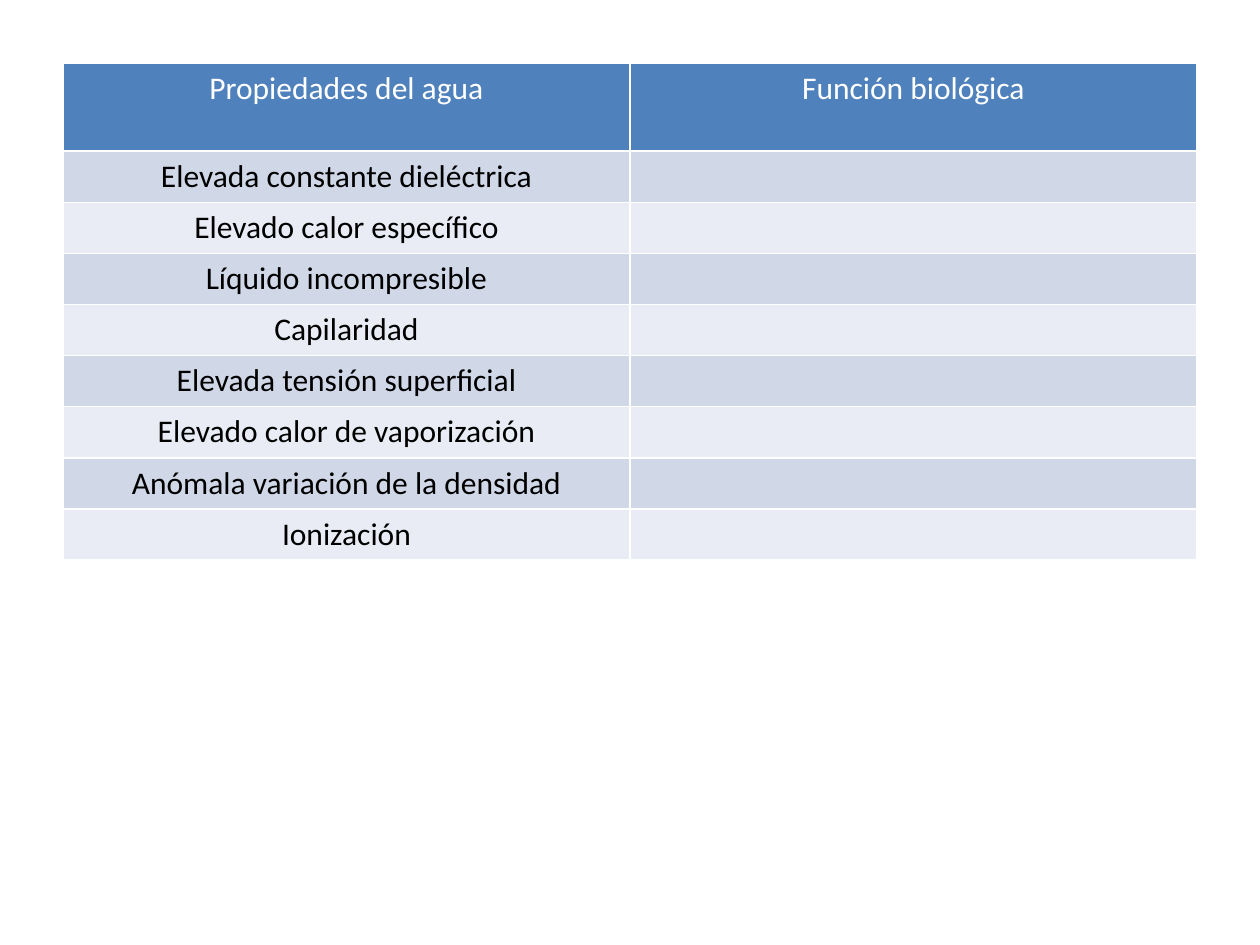
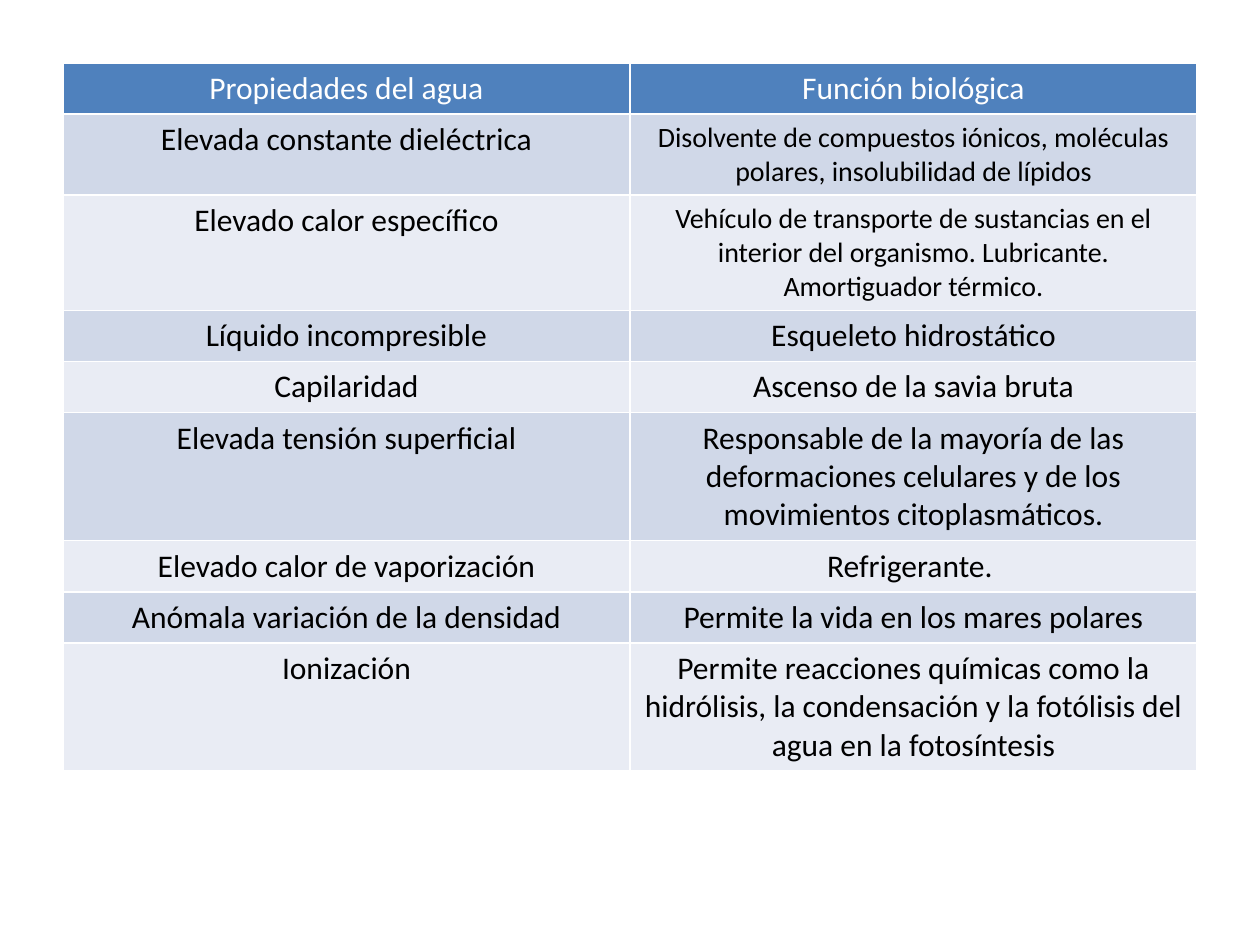
from lxml.etree import SubElement
from pptx import Presentation
from pptx.dml.color import RGBColor
from pptx.enum.text import PP_ALIGN
from pptx.oxml.ns import qn
from pptx.util import Inches, Pt

# Shared style
WIDTH, HEIGHT = 10, 7.5
MARGIN = WIDTH / 20
ROW_HEIGHT = 0.4
WHITE, BLACK, HEADER_BLUE = "FFFFFF", "000000", "4F81BD"
BANDS = ("D0D8E8", "E9ECF4")
BODY_SIZE, SMALL_SIZE = 18, 16

# Content: property, biological function, size of the function text
HEADINGS = ("Propiedades del agua", "Función biológica")
PROPERTIES = [
    ("Elevada constante dieléctrica",
     "Disolvente de compuestos iónicos, moléculas polares, insolubilidad de lípidos",
     SMALL_SIZE),
    ("Elevado calor específico",
     "Vehículo de transporte de sustancias en el interior del organismo. "
     "Lubricante. Amortiguador térmico.", SMALL_SIZE),
    ("Líquido incompresible", "Esqueleto hidrostático", BODY_SIZE),
    ("Capilaridad", "Ascenso de la savia bruta", BODY_SIZE),
    ("Elevada tensión superficial",
     "Responsable de la mayoría de las deformaciones celulares y de los "
     "movimientos citoplasmáticos.", BODY_SIZE),
    ("Elevado calor de vaporización", "Refrigerante. ", BODY_SIZE),
    ("Anómala variación de la densidad", "Permite la vida en los mares polares",
     BODY_SIZE),
    ("Ionización",
     "Permite reacciones químicas como la hidrólisis, la condensación y la "
     "fotólisis del agua en la fotosíntesis", BODY_SIZE),
]


def color(hex_value):
    return RGBColor.from_string(hex_value)


def set_borders(cell):
    """Draw thin white lines on the four sides of a cell."""
    properties = cell._tc.get_or_add_tcPr()
    for side in ("a:lnL", "a:lnR", "a:lnT", "a:lnB"):
        line = SubElement(properties, qn(side), w=str(Pt(1)))
        fill = SubElement(line, qn("a:solidFill"))
        SubElement(fill, qn("a:srgbClr"), val=WHITE)


def fill_cell(cell, text, fill, font_color, size=BODY_SIZE):
    set_borders(cell)
    cell.fill.solid()
    cell.fill.fore_color.rgb = color(fill)
    para = cell.text_frame.paragraphs[0]
    para.alignment = PP_ALIGN.CENTER
    font = para.font
    if text:
        span = para.add_run()
        span.text = text
        font = span.font
    for name, value in {"name": "Calibri", "size": Pt(size), "bold": False}.items():
        setattr(font, name, value)
    font.color.rgb = color(font_color)


def add_property_table(page, header_height, with_functions):
    """Add the two-column table; the function column may stay empty."""
    height = header_height + len(PROPERTIES) * ROW_HEIGHT
    frame = page.shapes.add_table(
        len(PROPERTIES) + 1, len(HEADINGS), Inches(MARGIN), Inches(MARGIN),
        Inches(WIDTH - 2 * MARGIN), Inches(height))
    table = frame.table
    table.first_row = table.horz_banding = False
    for row in table.rows:
        row.height = Inches(ROW_HEIGHT)
    table.rows[0].height = Inches(header_height)

    # Header
    for column, heading in enumerate(HEADINGS):
        fill_cell(table.cell(0, column), heading, HEADER_BLUE, WHITE)

    # Banded body
    for number, (name, function, size) in enumerate(PROPERTIES, start=1):
        band = BANDS[(number - 1) % len(BANDS)]
        fill_cell(table.cell(number, 0), name, band, BLACK)
        if with_functions:
            fill_cell(table.cell(number, 1), function, band, BLACK, size)
        else:
            fill_cell(table.cell(number, 1), "", band, BLACK)


def main():
    deck = Presentation()
    deck.slide_width, deck.slide_height = Inches(WIDTH), Inches(HEIGHT)
    # Exercise first, then its solution
    for header_height, with_functions in ((0.7, False), (ROW_HEIGHT, True)):
        page = deck.slides.add_slide(deck.slide_layouts[6])
        add_property_table(page, header_height, with_functions)
    deck.save("out.pptx")


if __name__ == "__main__":
    main()
